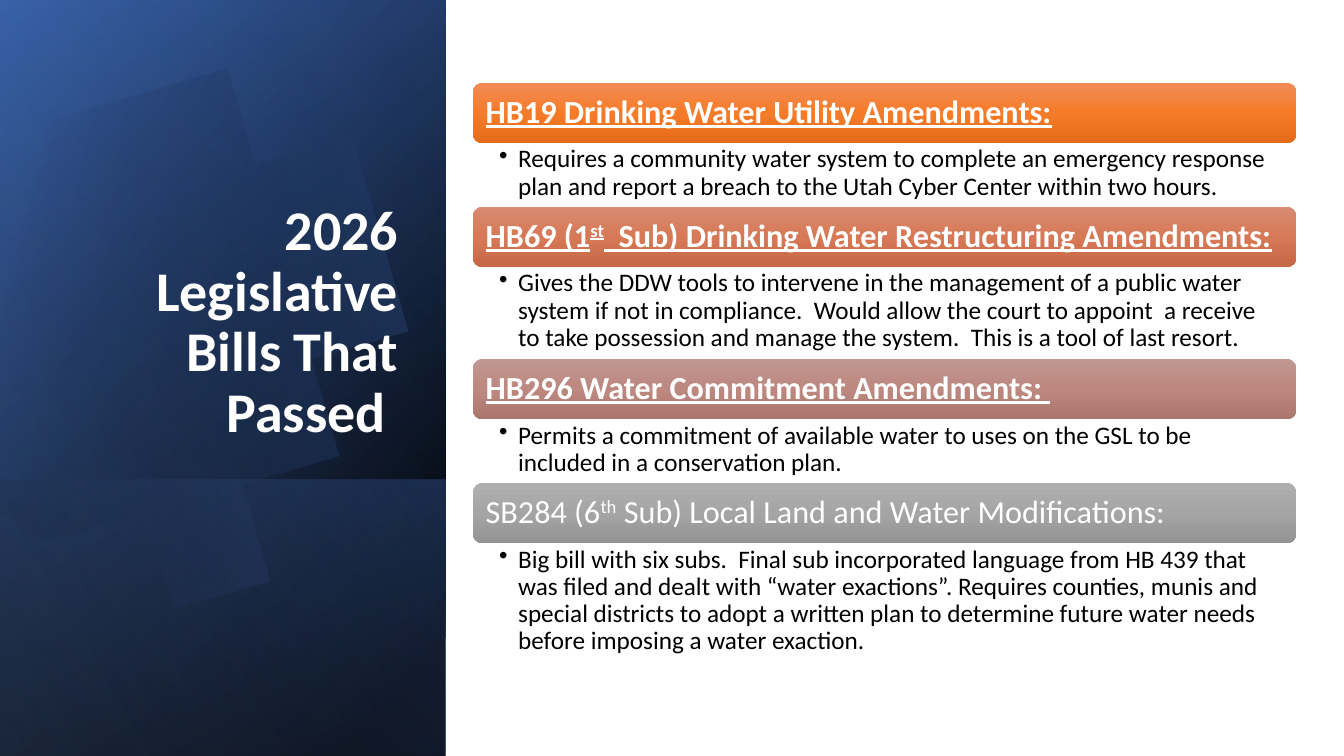
from dataclasses import dataclass
from math import cos, radians, sin

from pptx import Presentation
from pptx import util as u
from pptx.dml.color import RGBColor
from pptx.enum import shapes, text
from pptx.oxml import parse_xml
from pptx.oxml.ns import nsdecls, qn

WHITE = RGBColor(0xFF, 0xFF, 0xFF)
BLACK = RGBColor(0x00, 0x00, 0x00)
NAVY = RGBColor(0x2F, 0x55, 0x97)
BLUE = RGBColor(0x44, 0x72, 0xC4)
PALE_BLUE = RGBColor(0x8F, 0xAA, 0xDC)
ORANGES = RGBColor(0xF1, 0x8C, 0x57), RGBColor(0xF6, 0x7B, 0x28), RGBColor(0xE5, 0x6C, 0x19)
CORALS = RGBColor(0xD7, 0x8B, 0x72), RGBColor(0xD7, 0x79, 0x56), RGBColor(0xC6, 0x68, 0x46)
ROSES = RGBColor(0xC1, 0x97, 0x91), RGBColor(0xBC, 0x88, 0x80), RGBColor(0xAA, 0x76, 0x6E)
GREYS = RGBColor(0xAF, 0xAF, 0xAF), RGBColor(0xA5, 0xA5, 0xA5), RGBColor(0x93, 0x93, 0x93)

FONT = "Calibri"
WIDTH, HEIGHT = u.Inches(13.333), u.Inches(7.5)


@dataclass
class Stop:
    position: int
    color: RGBColor
    opacity: int = 100


@dataclass
class Area:
    """A rectangle in percent of the slide's width and height."""
    left: float
    top: float
    width: float
    height: float

    def box(self) -> tuple[int, int, int, int]:
        return (round(self.left * WIDTH / 100), round(self.top * HEIGHT / 100),
                round(self.width * WIDTH / 100), round(self.height * HEIGHT / 100))


@dataclass
class Layer:
    area: Area
    angle: int
    stops: list[Stop]


@dataclass
class Bill:
    heading: tuple[str, ...]  # every second part is superscript
    detail: str
    detail_height: float
    colors: tuple[RGBColor, ...]
    strong: bool = True


PANEL = Area(0, 0, 33.15, 100)
BAND = Area(0, 63.47, 33.15, 36.53)
TITLE = Area(4.8, 24.53, 25.58, 34.93)
BILLS_LEFT, BILLS_TOP, BILLS_WIDTH, HEADING_HEIGHT = 35.18, 10.93, 61.28, 8

LAYERS_BELOW = [
    Layer(PANEL, 50, [Stop(8, BLACK), Stop(100, NAVY)]),
    Layer(PANEL, 30, [Stop(0, BLACK, 0), Stop(99, BLUE, 46)]),
    Layer(BAND, 130, [Stop(2, BLUE, 29), Stop(100, BLACK, 30)]),
]
GLOW = Layer(PANEL, 120, [Stop(0, BLACK, 0), Stop(99, PALE_BLUE, 11)])

# Circle outline in inches: a start, then curves (three points) and lines (one)
CIRCLE_TURN = -16.1
CIRCLE_START = (1.49, 1.1)
CIRCLE_SEGMENTS = [
    [(2.46, 1.12), (3.35, 1.77), (3.63, 2.75)],
    [(3.98, 3.97), (3.28, 5.23), (2.07, 5.58)],
    [(1.31, 5.8), (0.53, 5.61), (-0.03, 5.14)],
    [(-0.15, 5.03)], [(-0.15, 1.75)], [(0, 1.61)],
    [(0.23, 1.42), (0.5, 1.28), (0.8, 1.19)],
    [(1.03, 1.13), (1.26, 1.1), (1.49, 1.1)],
]

BILLS = [
    Bill(("HB19 Drinking Water Utility Amendments:",),
         "Requires a community water system to complete an emergency response plan and "
         "report a breach to the Utah Cyber Center within two hours.", 8.4, ORANGES),
    Bill(("HB69 (1", "st", "  Sub) Drinking Water Restructuring Amendments:"),
         "Gives the DDW tools to intervene in the management of a public water system if "
         "not in compliance.  Would allow the court to appoint  a receive to take "
         "possession and manage the system.  This is a tool of last resort.", 12.13, CORALS),
    Bill(("HB296 Water Commitment Amendments: ",),
         "Permits a commitment of available water to uses on the GSL to be included in a "
         "conservation plan.", 8.4, ROSES),
    Bill(("SB284 (6", "th", " Sub) Local Land and Water Modifications:"),
         "Big bill with six subs.  Final sub incorporated language from HB 439 that was "
         "filed and dealt with “water exactions”. Requires counties, munis and special "
         "districts to adopt a written plan to determine future water needs before "
         "imposing a water exaction.", 15.6, GREYS, strong=False),
]


def apply(target, **values) -> None:
    for name, value in values.items():
        setattr(target, name, value)


def paint(shape, angle: int, stops: list[Stop]) -> None:
    """Give a shape a linear gradient, no line and no shadow."""
    marks = "".join(
        f'<a:gs pos="{stop.position * 1000}"><a:srgbClr val="{stop.color}">'
        f'<a:alpha val="{stop.opacity * 1000}"/></a:srgbClr></a:gs>' for stop in stops)
    gradient = parse_xml(
        f'<a:gradFill {nsdecls("a")} rotWithShape="1"><a:gsLst>{marks}</a:gsLst>'
        f'<a:lin ang="{angle * 60000}" scaled="0"/></a:gradFill>')
    shape.fill.background()
    properties = shape._element.spPr
    properties.replace(properties.find(qn("a:noFill")), gradient)
    shape.line.fill.background()
    shape.shadow.inherit = False


def add_layer(slide, layer: Layer) -> None:
    """Draw a mirrored rectangle that fills its area after a quarter turn."""
    left, top, width, height = layer.area.box()
    shape = slide.shapes.add_shape(
        shapes.MSO_SHAPE.RECTANGLE, left + (width - height) // 2,
        top + (height - width) // 2, height, width)
    shape.rotation = 90
    shape._element.spPr.xfrm.set("flipH", "1")
    paint(shape, layer.angle, layer.stops)


def circle_points(steps: int = 24) -> list[tuple[float, float]]:
    points = [CIRCLE_START]
    for segment in CIRCLE_SEGMENTS:
        if len(segment) == 1:
            points += segment
            continue
        corners = [points[-1], *segment]
        for step in range(1, steps + 1):
            t = step / steps
            weights = (1 - t) ** 3, 3 * t * (1 - t) ** 2, 3 * t * t * (1 - t), t ** 3
            points.append(tuple(sum(w * corner[axis] for w, corner in zip(weights, corners))
                                for axis in (0, 1)))
    return points


def add_circle(slide) -> None:
    """Turn the outline back about its centre, then rotate the finished shape."""
    center_x, center_y = 1.585, 3.345
    turn = radians(-CIRCLE_TURN)
    points = [(center_x + (x - center_x) * cos(turn) - (y - center_y) * sin(turn),
               center_y + (x - center_x) * sin(turn) + (y - center_y) * cos(turn))
              for x, y in circle_points()]
    builder = slide.shapes.build_freeform(*points[0], scale=u.Inches(1))
    builder.add_line_segments(points[1:], close=True)
    circle = builder.convert_to_shape()
    circle.rotation = CIRCLE_TURN
    paint(circle, 30, [Stop(29, BLACK, 0), Stop(100, BLUE, 43)])


def add_run(paragraph, words: str, size: int, color: RGBColor, **values) -> None:
    run = paragraph.add_run()
    run.text = words
    apply(run.font, name=FONT, size=u.Pt(size), **values)
    run.font.color.rgb = color
    return run


def add_title(slide) -> None:
    title = slide.shapes.title
    title._element.getparent().append(title._element)  # in front of the panel
    apply(title, **dict(zip(("left", "top", "width", "height"), TITLE.box())))
    apply(title.text_frame, word_wrap=True, auto_size=text.MSO_AUTO_SIZE.NONE,
          vertical_anchor=text.MSO_ANCHOR.BOTTOM)
    paragraph = title.text_frame.paragraphs[0]
    apply(paragraph, alignment=text.PP_ALIGN.RIGHT, line_spacing=0.9)
    add_run(paragraph, "2026 Legislative Bills That Passed ", 40, WHITE, bold=True)


def add_heading(slide, bill: Bill, top: float) -> None:
    area = Area(BILLS_LEFT, top, BILLS_WIDTH, HEADING_HEIGHT)
    bar = slide.shapes.add_shape(shapes.MSO_SHAPE.ROUNDED_RECTANGLE, *area.box())
    paint(bar, 90, [Stop(i * 50, color) for i, color in enumerate(bill.colors)])
    inset = u.Inches(0.1)
    apply(bar.text_frame, word_wrap=True, vertical_anchor=text.MSO_ANCHOR.MIDDLE,
          margin_left=inset, margin_right=inset, margin_top=inset, margin_bottom=inset)
    paragraph = bar.text_frame.paragraphs[0]
    apply(paragraph, alignment=text.PP_ALIGN.LEFT, line_spacing=0.9)
    for i, words in enumerate(bill.heading):
        run = add_run(paragraph, words, 23, WHITE, bold=bill.strong, underline=bill.strong)
        if i % 2:
            run.font._element.set("baseline", "30000")


def add_detail(slide, bill: Bill, top: float) -> None:
    area = Area(BILLS_LEFT, top, BILLS_WIDTH, bill.detail_height)
    frame = slide.shapes.add_textbox(*area.box()).text_frame
    apply(frame, word_wrap=True, margin_left=u.Inches(0.26), margin_right=u.Inches(0.18),
          margin_top=u.Inches(0.03), margin_bottom=u.Inches(0.03))
    paragraph = frame.paragraphs[0]
    apply(paragraph, level=1, line_spacing=0.9)
    properties = paragraph._p.get_or_add_pPr()
    properties.set("marL", str(u.Inches(0.19)))
    properties.set("indent", str(-u.Inches(0.19)))
    properties.append(parse_xml(f'<a:buChar {nsdecls("a")} char="•"/>'))
    add_run(paragraph, bill.detail, 18, BLACK)


def main() -> None:
    presentation = Presentation()
    apply(presentation, slide_width=WIDTH, slide_height=HEIGHT)
    slide = presentation.slides.add_slide(presentation.slide_layouts[5])
    # Side panel and title
    for layer in LAYERS_BELOW:
        add_layer(slide, layer)
    add_circle(slide)
    add_layer(slide, GLOW)
    add_title(slide)
    # Stacked bills
    top = BILLS_TOP
    for bill in BILLS:
        add_heading(slide, bill, top)
        add_detail(slide, bill, top + HEADING_HEIGHT)
        top += HEADING_HEIGHT + bill.detail_height
    presentation.save("out.pptx")


if __name__ == "__main__":
    main()
